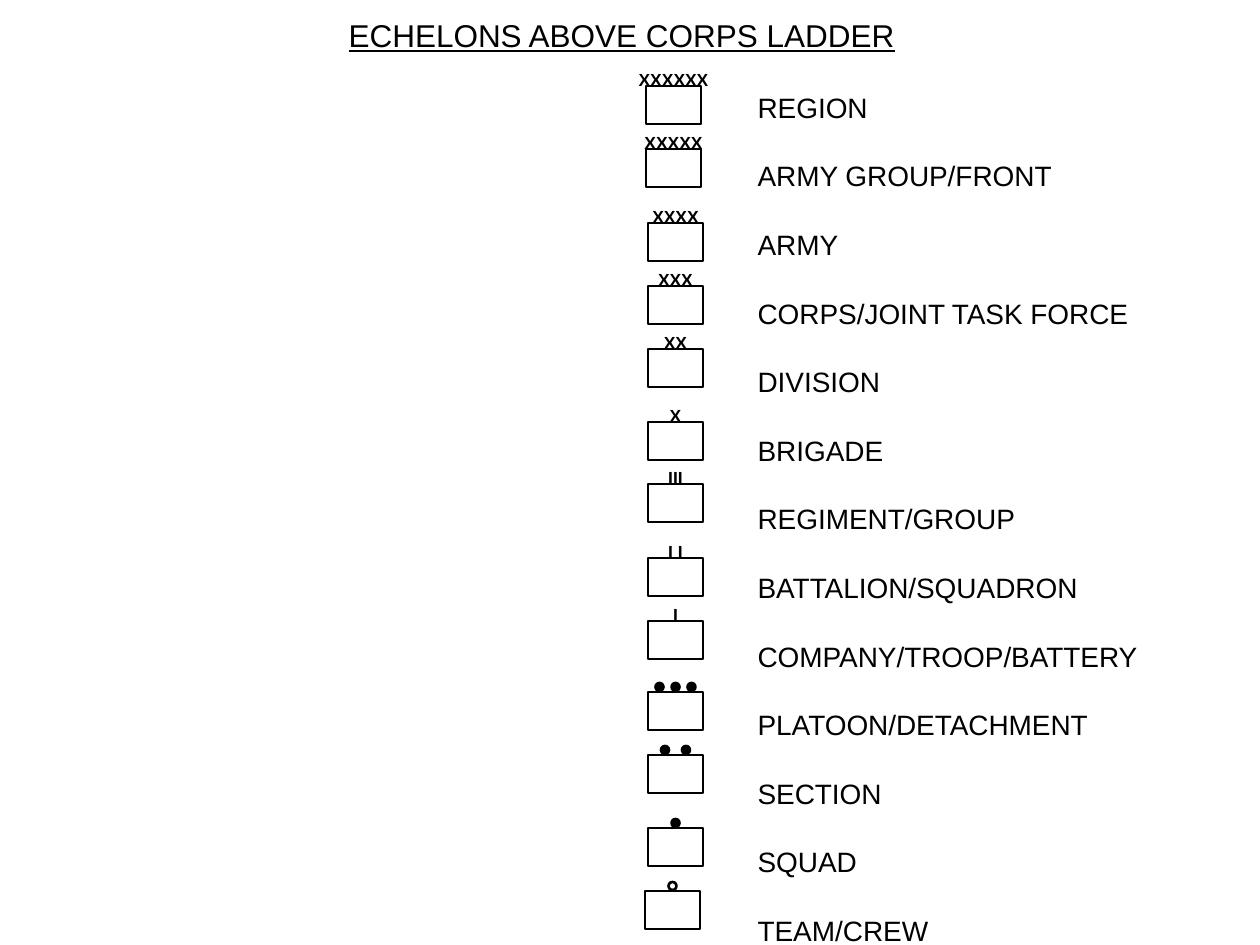
import pptx
import pptx.util
import pptx.dml.color
import pptx.enum.shapes
import pptx.enum.text
from lxml import etree

SCALE = 914400 // 126 + 1 / 7  # EMU in one px
FONT = "Arial"
INK = "000000"
BOX_W, BOX_H = 55, 38
DOT = 8
KIND = pptx.enum.shapes.MSO_SHAPE
ALIGN = pptx.enum.text.PP_ALIGN

# Unit name, box left, box top, mark text, mark width
LETTERS = [
    ("REGION", 646, 86, "XXXXXX", 95),
    ("ARMY GROUP/FRONT", 646, 149, "XXXXX", 83),
    ("ARMY", 648, 223, "XXXX", 72),
    ("CORPS/JOINT TASK FORCE", 648, 286, "XXX", 60),
    ("DIVISION", 648, 349, "XX", 49),
    ("BRIGADE", 648, 422, "X", 37),
    ("REGIMENT/GROUP", 648, 484, "III", 40),
    ("BATTALION/SQUADRON", 648, 558, "I I", 40),
    ("COMPANY/TROOP/BATTERY", 648, 621, "I", 30),
]
# Unit name, box left, box top, dot count, dot pitch, dot fill
DOTS = [
    ("PLATOON/DETACHMENT", 648, 692, 3, 16, INK),
    ("SECTION", 648, 755, 2, 21, INK),
    ("SQUAD", 648, 828, 1, 0, INK),
    ("TEAM/CREW", 645, 891, 1, 0, "FFFFFF"),
]


def px(num):
    return pptx.util.Emu(round(num * SCALE))


def color(code):
    return pptx.dml.color.RGBColor.from_string(code)


def style(para, size, align, bold=False, line=False):
    para.alignment = align
    font = para.font
    font.name, font.size = FONT, pptx.util.Pt(size)
    font.bold, font.underline = bold, line
    font.color.rgb = color(INK)


def place(shape, left, top, width, height):
    shape.left, shape.top = px(left), px(top)
    shape.width, shape.height = px(width), px(height)


def setup(frame, wrap=False):
    frame.word_wrap = wrap
    frame.auto_size = pptx.enum.text.MSO_AUTO_SIZE.NONE
    frame.vertical_anchor = pptx.enum.text.MSO_ANCHOR.TOP


def add_title(slide, text):
    title = slide.shapes.title
    place(title, 336, 10, 573, 50)
    setup(title.text_frame)
    title.text_frame.text = text
    style(title.text_frame.paragraphs[0], 18, ALIGN.LEFT, line=True)


def add_names(slide, names):
    body = slide.placeholders[1]
    place(body, 745, 84, 411, 854)
    frame = body.text_frame
    setup(frame, wrap=True)
    frame.text = "\n".join(names)
    for rank, para in enumerate(frame.paragraphs):
        props = para._p.get_or_add_pPr()
        props.set("marL", "0")
        props.set("indent", "0")
        etree.SubElement(props, pptx.oxml.ns.qn("a:buNone"))
        para.space_before = pptx.util.Pt(20 if rank else 0)
        style(para, 16, ALIGN.LEFT)


def add_form(group, kind, left, top, width, height, fill=None):
    form = group.shapes.add_shape(
        kind, px(left), px(top), px(width), px(height))
    form.shadow.inherit = False
    if fill:
        form.fill.solid()
        form.fill.fore_color.rgb = color(fill)
    else:
        form.fill.background()
    form.line.color.rgb = color(INK)
    form.line.width = pptx.util.Pt(1.5)


def add_unit(slide, left, top):
    group = slide.shapes.add_group_shape()
    add_form(group, KIND.RECTANGLE, left, top, BOX_W, BOX_H)
    return group


def add_mark(group, mid, top, text, width):
    box = group.shapes.add_textbox(
        px(mid - width / 2), px(top - 23), px(width), px(34))
    setup(box.text_frame)
    box.text_frame.text = text
    style(box.text_frame.paragraphs[0], 10, ALIGN.CENTER, bold=True)


def add_dots(group, mid, top, count, pitch, fill):
    first = mid - (count - 1) * pitch / 2 - DOT / 2
    for rank in range(count):
        add_form(group, KIND.OVAL, first + rank * pitch, top - 9,
                 DOT, DOT, fill)


def main():
    deck = pptx.Presentation()
    deck.slide_width, deck.slide_height = px(1260), px(945)
    slide = deck.slides.add_slide(deck.slide_layouts[1])

    # Title and unit names
    add_title(slide, "ECHELONS ABOVE CORPS LADDER")
    add_names(slide, [row[0] for row in LETTERS + DOTS])

    # Units marked with letters
    for _, left, top, text, width in LETTERS:
        group = add_unit(slide, left, top)
        add_mark(group, left + BOX_W / 2, top, text, width)

    # Units marked with dots
    for _, left, top, count, pitch, fill in DOTS:
        group = add_unit(slide, left, top)
        add_dots(group, left + BOX_W / 2, top, count, pitch, fill)

    deck.save("out.pptx")


if __name__ == "__main__":
    main()
